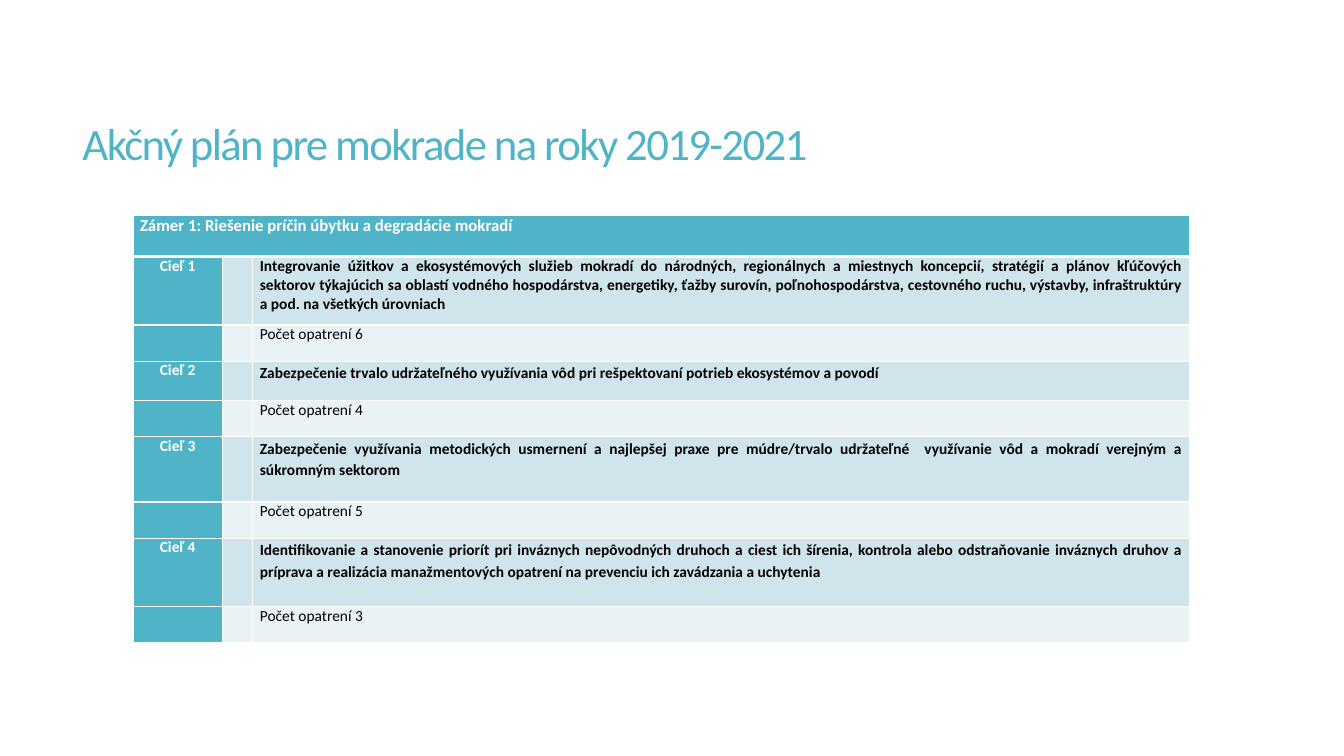
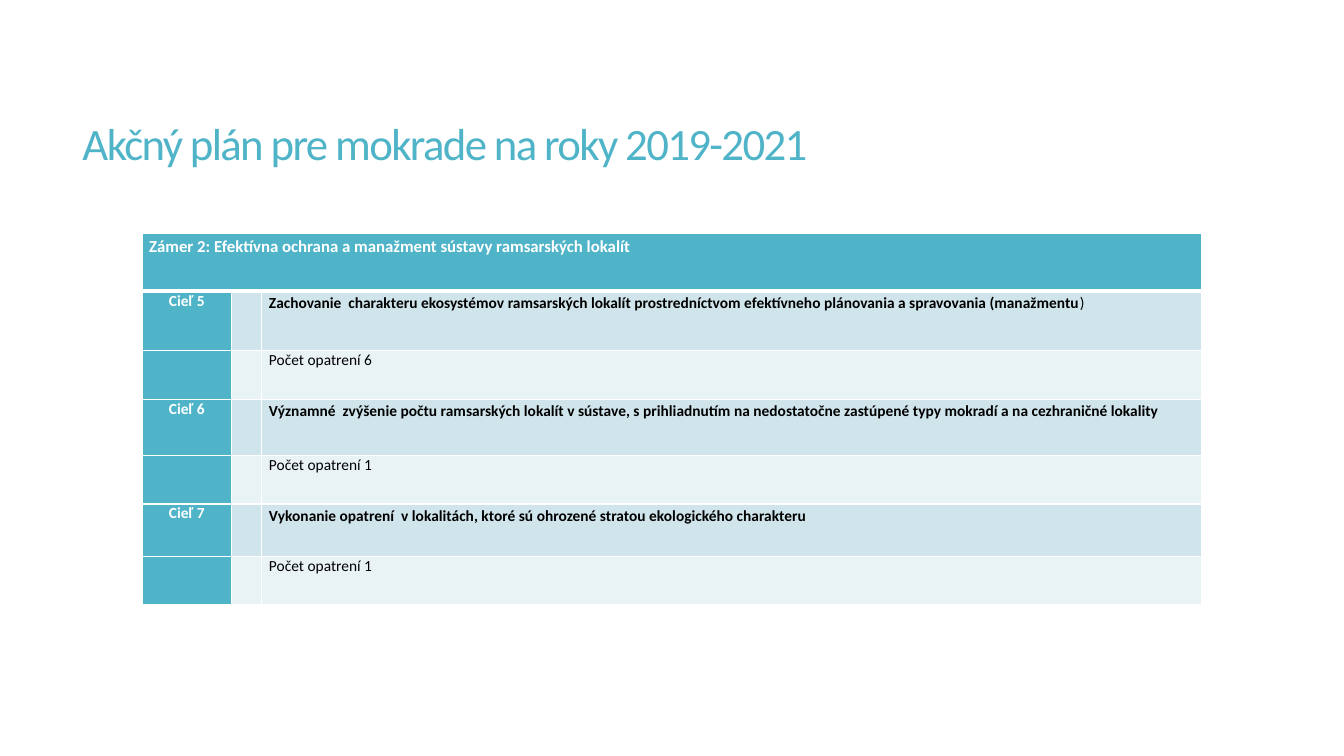
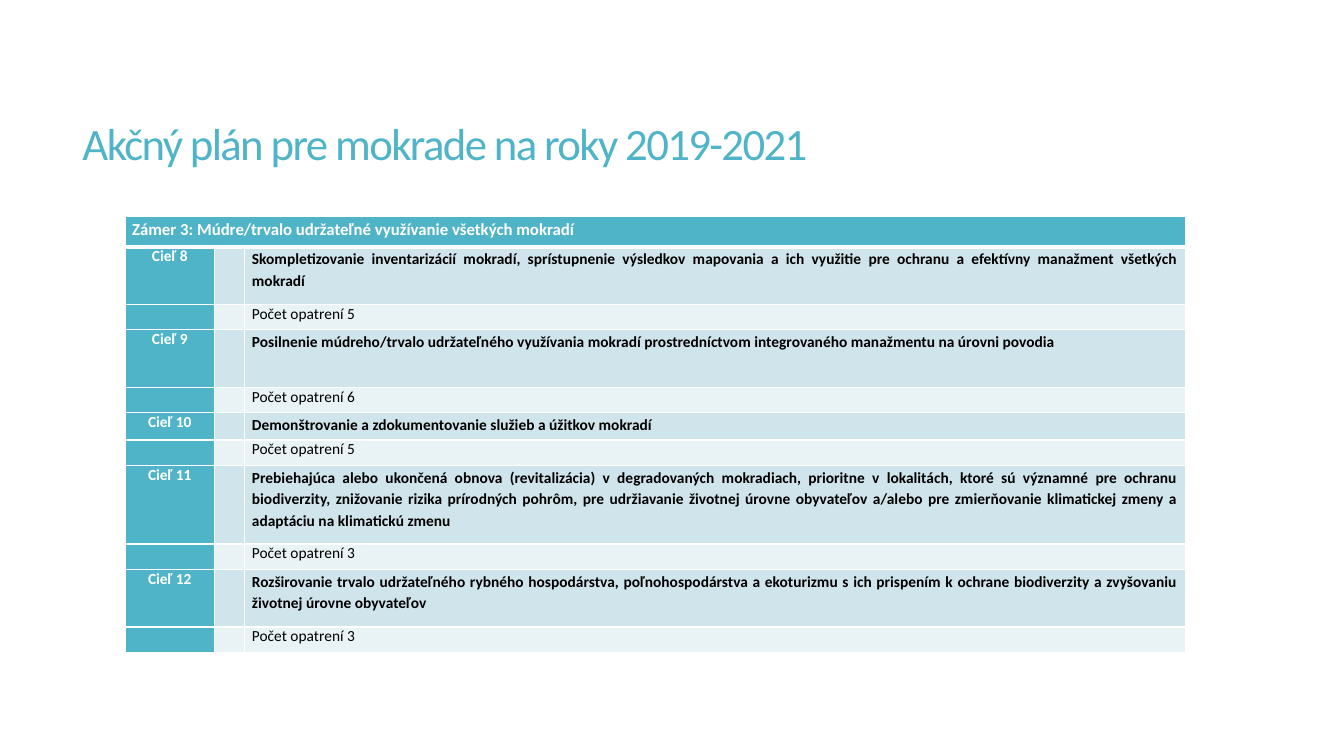
"""Build three slides of the wetland action plan, each with a table of goals."""
from itertools import count

from lxml import etree
from pptx import Presentation
from pptx import util as u
from pptx.dml.color import RGBColor
from pptx.enum import text
from pptx.oxml import ns

FONT = "Calibri"
TEAL, PALE, PALER, WHITE, BLACK = "50B4C8", "D0E5EB", "E9F2F5", "FFFFFF", "000000"
TITLE = "Akčný plán pre mokrade na roky 2019-2021"
LABEL_W, GAP_W = 2.26, 0.76
LEFT, CENTER, JUSTIFY = text.PP_ALIGN.LEFT, text.PP_ALIGN.CENTER, text.PP_ALIGN.JUSTIFY

AIMS = [
    {
        "title": "Zámer 1: Riešenie príčin úbytku a degradácie mokradí",
        "at": (3.35, 5.44), "body_w": 23.62, "head_h": 1.02, "count_h": 0.91, "head_spacing": 1.0,
        "goals": [
            (1.73, 1.0, 6, ["Integrovanie úžitkov a ekosystémových služieb mokradí do národných, regionálnych a miestnych koncepcií, stratégií a plánov kľúčových sektorov týkajúcich sa oblastí vodného hospodárstva, energetiky, ťažby surovín, poľnohospodárstva, cestovného ruchu, výstavby, infraštruktúry a pod. na všetkých úrovniach"]),
            (0.99, 1.15, 4, ["Zabezpečenie trvalo udržateľného využívania vôd pri rešpektovaní potrieb ekosystémov a povodí"]),
            (1.65, 1.15, 5, ["Zabezpečenie využívania metodických usmernení a najlepšej praxe pre múdre/trvalo udržateľné  využívanie vôd a mokradí verejným a súkromným sektorom"]),
            (1.73, 1.15, 3, ["Identifikovanie a stanovenie priorít pri inváznych nepôvodných druhoch a ciest ich šírenia, kontrola alebo odstraňovanie inváznych druhov a príprava a realizácia manažmentových opatrení na prevenciu ich zavádzania a uchytenia"]),
        ],
    },
    {
        "title": "Zámer 2: Efektívna ochrana a manažment sústavy ramsarských lokalít",
        "at": (3.58, 5.89), "body_w": 23.67, "head_h": 1.45, "count_h": 1.22, "head_spacing": 1.15,
        "goals": [
            (1.5, 1.15, 6, ["Zachovanie  charakteru ekosystémov ramsarských lokalít prostredníctvom efektívneho plánovania a spravovania (manažmentu", ")"]),
            (1.42, 1.15, 1, ["Významné  zvýšenie počtu ramsarských lokalít v sústave, s prihliadnutím na nedostatočne zastúpené typy mokradí a na cezhraničné lokality"]),
            (1.32, 1.15, 1, ["Vykonanie opatrení  v lokalitách, ktoré sú ohrozené stratou ekologického charakteru"]),
        ],
    },
    {
        "title": "Zámer 3: Múdre/trvalo udržateľné využívanie všetkých mokradí",
        "at": (3.15, 5.46), "body_w": 23.7, "head_h": 0.76, "count_h": 0.64, "head_spacing": 1.15,
        "goals": [
            (1.45, 1.15, 5, ["Skompletizovanie inventarizácií mokradí, sprístupnenie výsledkov mapovania a ich využitie pre ochranu a efektívny manažment všetkých mokradí"]),
            (1.45, 1.15, 6, ["Posilnenie múdreho/trvalo udržateľného využívania mokradí prostredníctvom integrovaného manažmentu na úrovni povodia"]),
            (0.69, 1.15, 5, ["Demonštrovanie a zdokumentovanie služieb a úžitkov mokradí"]),
            (1.98, 1.15, 3, ["Prebiehajúca alebo ukončená obnova (revitalizácia) v degradovaných mokradiach, prioritne v lokalitách, ktoré sú významné pre ochranu biodiverzity, znižovanie rizika prírodných pohrôm, pre udržiavanie životnej úrovne obyvateľov a/alebo pre zmierňovanie klimatickej zmeny a adaptáciu na klimatickú zmenu"]),
            (1.45, 1.15, 3, ["Rozširovanie trvalo udržateľného rybného hospodárstva, poľnohospodárstva a ekoturizmu s ich prispením k ochrane biodiverzity a zvyšovaniu životnej úrovne obyvateľov"]),
        ],
    },
]


def rgb(value):
    return RGBColor.from_string(value)


def set_all(obj, values):
    for name, value in values.items():
        setattr(obj, name, value)


def add_run(p, content, size, color, bold=False):
    r = p.add_run()
    r.text = content
    set_all(r.font, {"name": FONT, "size": u.Pt(size), "bold": bold})
    r.font.color.rgb = rgb(color)
    return r


def add_title(s):
    sp = s.shapes.add_textbox(u.Cm(1.83), u.Cm(1.4), u.Cm(29.92), u.Cm(4.6))
    tf = sp.text_frame
    set_all(tf, {"word_wrap": True, "vertical_anchor": text.MSO_ANCHOR.MIDDLE})
    p = tf.paragraphs[0]
    set_all(p, {"alignment": LEFT, "line_spacing": 0.85})
    r = add_run(p, TITLE, 32, TEAL)
    r.font._element.set("spc", "-120")


def set_borders(cell, top, bottom):
    tcPr = cell._tc.get_or_add_tcPr()
    widths = {"a:lnL": 1, "a:lnR": 1, "a:lnT": top, "a:lnB": bottom}
    for i, (tag, width) in enumerate(widths.items()):
        ln = etree.Element(ns.qn(tag), w=str(u.Pt(width)))
        fill = etree.SubElement(ln, ns.qn("a:solidFill"))
        etree.SubElement(fill, ns.qn("a:srgbClr"), val=WHITE)
        tcPr.insert(i, ln)


def fill_cell(cell, fill, runs=(), size=11, color=BLACK, align=JUSTIFY, spacing=1.0, top=1, bottom=1):
    set_all(cell, {"margin_left": u.Cm(0.18), "margin_right": u.Cm(0.18),
                   "margin_top": 0, "margin_bottom": 0})
    cell.fill.solid()
    cell.fill.fore_color.rgb = rgb(fill)
    set_borders(cell, top, bottom)
    p = cell.text_frame.paragraphs[0]
    set_all(p, {"alignment": align, "line_spacing": spacing})
    for content, bold in runs:
        add_run(p, content, size, color, bold)
    if not runs:
        etree.SubElement(p._p, ns.qn("a:endParaRPr"), sz=str(size * 100))


def add_goals(s, aim, numbers):
    heights = [aim["head_h"]]
    for height, *_ in aim["goals"]:
        heights += [height, aim["count_h"]]
    widths = [LABEL_W, GAP_W, aim["body_w"]]
    left, top = aim["at"]
    table = s.shapes.add_table(len(heights), len(widths), u.Cm(left), u.Cm(top),
                               u.Cm(sum(widths)), u.Cm(sum(heights))).table
    set_all(table, {"first_row": False, "horz_banding": False})
    for column, width in zip(table.columns, widths):
        column.width = u.Cm(width)
    for row, height in zip(table.rows, heights):
        row.height = u.Cm(height)

    table.cell(0, 0).merge(table.cell(0, 2))
    for i in range(3):
        runs = [(aim["title"], True)] if i == 0 else []
        fill_cell(table.cell(0, i), TEAL, runs, size=12, color=WHITE,
                  spacing=aim["head_spacing"], bottom=3)

    for i, (_, spacing, measures, parts) in enumerate(aim["goals"]):
        row = 2 * i + 1
        edge = 3 if i == 0 else 1
        label = [(f"Cieľ {next(numbers)}", True)]
        body = [(part, j == 0) for j, part in enumerate(parts)]
        fill_cell(table.cell(row, 0), TEAL, label, color=WHITE, align=CENTER, top=edge)
        fill_cell(table.cell(row, 1), PALE, top=edge)
        fill_cell(table.cell(row, 2), PALE, body, spacing=spacing, top=edge)
        fill_cell(table.cell(row + 1, 0), TEAL)
        fill_cell(table.cell(row + 1, 1), PALER)
        fill_cell(table.cell(row + 1, 2), PALER, [(f"Počet opatrení {measures}", False)])


def main():
    prs = Presentation()
    set_all(prs, {"slide_width": u.Cm(33.87), "slide_height": u.Cm(19.05)})
    numbers = count(1)
    for aim in AIMS:
        s = prs.slides.add_slide(prs.slide_layouts[6])
        add_title(s)
        add_goals(s, aim, numbers)
    prs.save("out.pptx")


if __name__ == "__main__":
    main()
